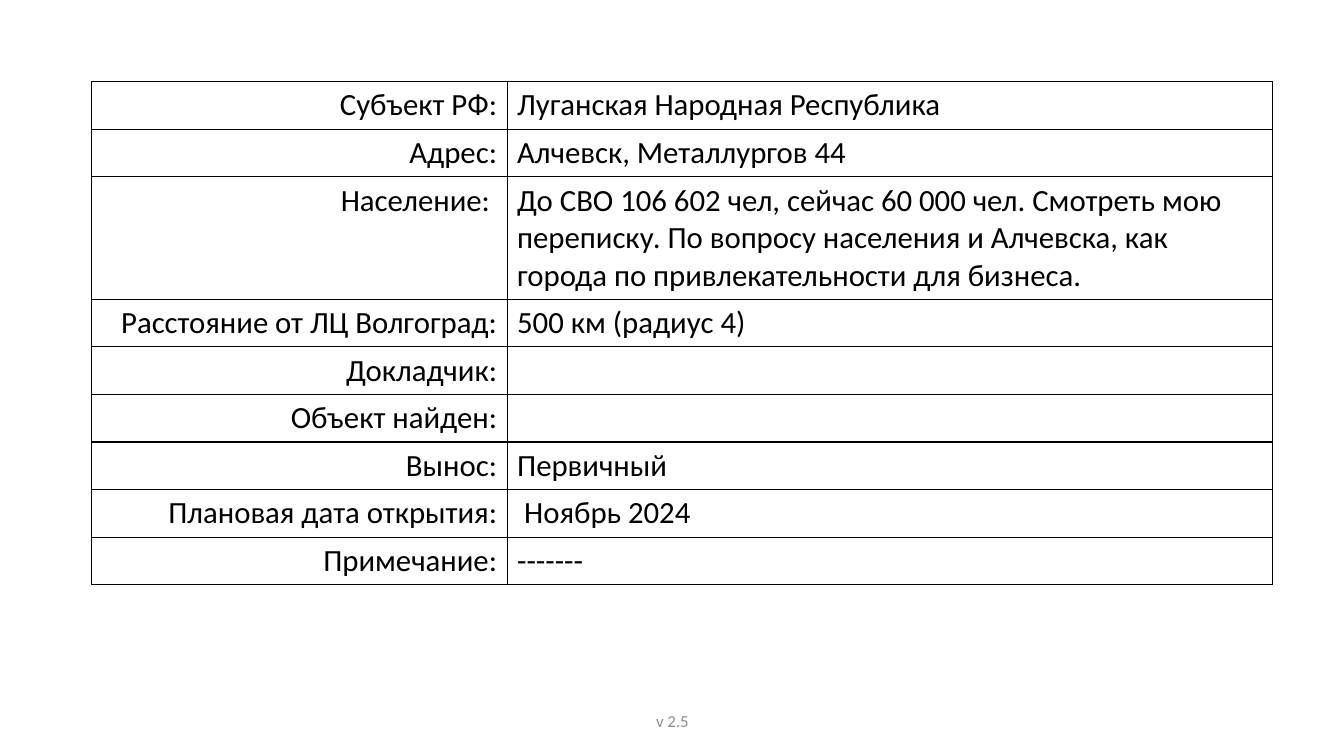
from lxml.etree import SubElement
from pptx import Presentation
from pptx.dml.color import RGBColor
from pptx.enum.text import MSO_ANCHOR, PP_ALIGN
from pptx.oxml.ns import qn
from pptx.util import Inches, Pt

ROW_HEIGHT = 0.41
COLUMN_WIDTHS = [4.12, 7.59]
SPACE_WIDTH = 0.07
ROWS = [
    ("Субъект РФ:", "Луганская Народная Республика"),
    ("Адрес:", "Алчевск, Металлургов 44"),
    ("Население:", "До СВО 106 602 чел, сейчас 60 000 чел. Смотреть мою переписку. "
     "По вопросу населения и Алчевска, как города по привлекательности для бизнеса."),
    ("Расстояние от ЛЦ Волгоград:", "500 км (радиус 4)"),
    ("Докладчик:", ""),
    ("Объект найден:", ""),
    ("Вынос:", "Первичный"),
    ("Плановая дата открытия:", "Ноябрь 2024"),
    ("Примечание:", "-------"),
]


def write(text_frame, text, size, color="000000", align=PP_ALIGN.LEFT):
    paragraph = text_frame.paragraphs[0]
    paragraph.text = text
    paragraph.alignment = align
    paragraph.font.size = Pt(size)
    paragraph.font.name = "Calibri"
    paragraph.font.color.rgb = RGBColor.from_string(color)


def add_borders(cell, color="000000", width=1):
    properties = cell._tc.get_or_add_tcPr()
    for side in ("a:lnL", "a:lnR", "a:lnT", "a:lnB"):
        line = SubElement(properties, qn(side), w=str(Pt(width)))
        fill = SubElement(line, qn("a:solidFill"))
        SubElement(fill, qn("a:srgbClr"), val=color)


presentation = Presentation()
presentation.slide_width = Inches(13.33)
presentation.slide_height = Inches(7.5)
slide = presentation.slides.add_slide(presentation.slide_layouts[6])

# Object details
frame = slide.shapes.add_table(
    len(ROWS), len(COLUMN_WIDTHS), Inches(0.91), Inches(0.81),
    Inches(sum(COLUMN_WIDTHS)), Inches(ROW_HEIGHT * len(ROWS)))
table = frame.table
table.first_row = False
table.horz_banding = False
for column, width in zip(table.columns, COLUMN_WIDTHS):
    column.width = Inches(width)

for row, texts in zip(table.rows, ROWS):
    row.height = Inches(ROW_HEIGHT)
    for cell, text, align in zip(row.cells, texts, (PP_ALIGN.RIGHT, PP_ALIGN.LEFT)):
        add_borders(cell)
        cell.fill.background()
        write(cell.text_frame, text, size=22, align=align)

# Two cells are inset by the width of one space
table.cell(2, 0).margin_right = Inches(0.1 + SPACE_WIDTH)
table.cell(7, 1).margin_left = Inches(0.1 + SPACE_WIDTH)

# Version in the footer
version = slide.shapes.add_textbox(Inches(4.42), Inches(6.95), Inches(4.5), Inches(0.4))
version.text_frame.word_wrap = True
version.text_frame.vertical_anchor = MSO_ANCHOR.MIDDLE
write(version.text_frame, "v 2.5", size=12, color="8C8C8C", align=PP_ALIGN.CENTER)

presentation.save("out.pptx")
